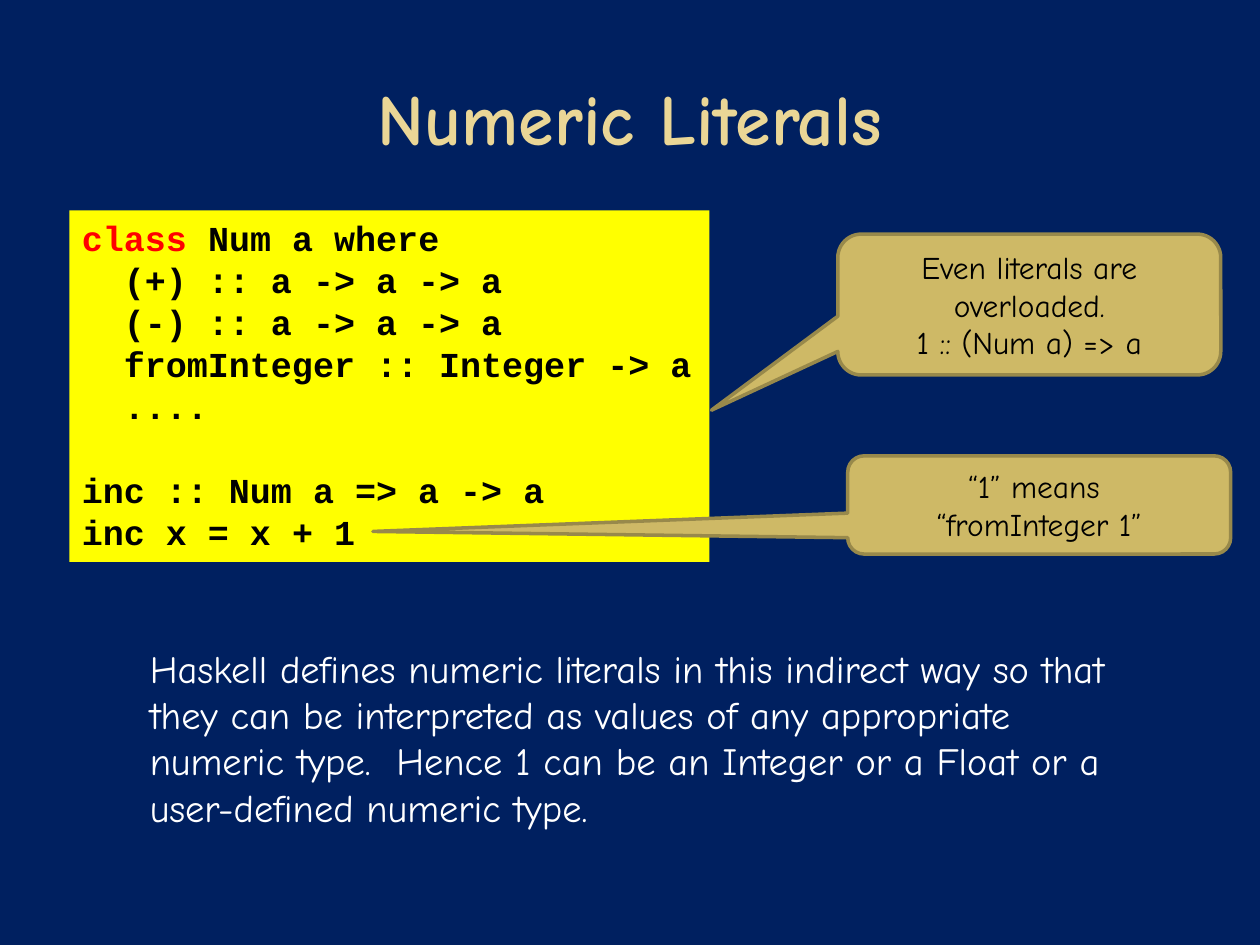
"""Build the slide on overloaded numeric literals in Haskell."""
from dataclasses import dataclass

from pptx import Presentation
from pptx.dml.color import RGBColor
from pptx.enum.shapes import MSO_SHAPE
from pptx.enum.text import MSO_ANCHOR, PP_ALIGN
from pptx.util import Cm, Pt

RECT = MSO_SHAPE.RECTANGLE
CALLOUT = MSO_SHAPE.ROUNDED_RECTANGULAR_CALLOUT
TOP, MIDDLE = MSO_ANCHOR.TOP, MSO_ANCHOR.MIDDLE
LEFT, CENTER = PP_ALIGN.LEFT, PP_ALIGN.CENTER
LINE_PITCH = 1.2


@dataclass(frozen=True)
class Theme:
    background: str = "002060"
    title: str = "EAD696"
    code_fill: str = "FFFF00"
    keyword: str = "FF0000"
    ink: str = "000000"
    callout_fill: str = "CEB966"
    callout_line: str = "98894B"
    note: str = "FFFFFF"
    font: str = "Comic Neue"
    code_font: str = "Courier New"
    title_size: int = 41
    code_size: int = 20
    callout_size: int = 18
    note_size: int = 22


@dataclass(frozen=True)
class Box:
    left: float
    top: float
    width: float
    height: float

    def lengths(self) -> tuple:
        return Cm(self.left), Cm(self.top), Cm(self.width), Cm(self.height)


@dataclass(frozen=True)
class Callout:
    box: Box
    tip: tuple[float, float]
    lines: tuple[str, ...]


@dataclass(frozen=True)
class CodeLine:
    text: str
    keyword: str = ""
    indent: int = 0
    gap: int = 0


THEME = Theme()
TITLE_BOX = Box(1.27, 0.76, 22.86, 3.18)
CODE_BOX = Box(1.4, 4.24, 12.9, 7.09)
NOTE_BOX = Box(2.77, 12.88, 19.86, 4.01)
CODE = (
    CodeLine("Num a where", keyword="class "),
    CodeLine("(+) :: a -> a -> a", indent=1),
    CodeLine("(-) :: a -> a -> a", indent=1),
    CodeLine("fromInteger :: Integer -> a", indent=1),
    CodeLine("....", indent=1),
    CodeLine("inc :: Num a => a -> a", gap=1),
    CodeLine("inc x = x + 1"),
)
CALLOUTS = (
    Callout(Box(16.89, 4.72, 7.72, 2.84), (-0.83, 0.75),
            ("Even literals are overloaded.", "1 :: (Num a) => a")),
    Callout(Box(17.09, 9.19, 7.72, 1.98), (-1.74, 0.27),
            ("“1” means ", "“fromInteger 1”")),
)
NOTE = ("Haskell defines numeric literals in this indirect way so that they can be "
        "interpreted as values of any appropriate numeric type.  Hence 1 can be an "
        "Integer or a Float or a user-defined numeric type.")


def rgb(value: str) -> RGBColor:
    return RGBColor.from_string(value)


def add_run(p, text: str, *, size: int, color: str, font: str = THEME.font,
            bold: bool = False) -> None:
    r = p.add_run()
    r.text = text
    r.font.name, r.font.size, r.font.bold = font, Pt(size), bold
    r.font.color.rgb = rgb(color)


def add_paragraph(tf, first: bool, size: int, align=LEFT):
    p = tf.paragraphs[0] if first else tf.add_paragraph()
    p.alignment = align
    p.line_spacing = Pt(size * LINE_PITCH)
    return p


def add_panel(slide, kind, box: Box, fill: str, anchor):
    sp = slide.shapes.add_shape(kind, *box.lengths())
    sp.shadow.inherit = False
    sp.fill.solid()
    sp.fill.fore_color.rgb = rgb(fill)
    sp.line.fill.background()
    sp.text_frame.word_wrap = True
    sp.text_frame.vertical_anchor = anchor
    return sp


def add_title(slide) -> None:
    sp = slide.shapes.title
    sp.left, sp.top, sp.width, sp.height = TITLE_BOX.lengths()
    sp.text_frame.vertical_anchor = MIDDLE
    p = sp.text_frame.paragraphs[0]
    p.alignment = CENTER
    add_run(p, "Numeric Literals", size=THEME.title_size, color=THEME.title, bold=True)


def add_code(slide) -> None:
    size = THEME.code_size
    style = {"size": size, "font": THEME.code_font, "bold": True}
    sp = add_panel(slide, RECT, CODE_BOX, THEME.code_fill, TOP)
    for i, line in enumerate(CODE):
        p = add_paragraph(sp.text_frame, i == 0, size)
        p.space_before = Pt(line.gap * size * LINE_PITCH)
        if line.indent:
            p._p.get_or_add_pPr().set("marL", str(Pt(line.indent * size * 1.2)))
        if line.keyword:
            add_run(p, line.keyword, color=THEME.keyword, **style)
        add_run(p, line.text, color=THEME.ink, **style)


def add_callout(slide, callout: Callout) -> None:
    sp = add_panel(slide, CALLOUT, callout.box, THEME.callout_fill, MIDDLE)
    sp.adjustments[0], sp.adjustments[1] = callout.tip
    sp.line.color.rgb = rgb(THEME.callout_line)
    sp.line.width = Pt(2)
    for i, text in enumerate(callout.lines):
        p = add_paragraph(sp.text_frame, i == 0, THEME.callout_size, CENTER)
        add_run(p, text, size=THEME.callout_size, color=THEME.ink)


def add_note(slide) -> None:
    tf = slide.shapes.add_textbox(*NOTE_BOX.lengths()).text_frame
    tf.word_wrap = True
    p = add_paragraph(tf, True, THEME.note_size)
    add_run(p, NOTE, size=THEME.note_size, color=THEME.note)


def main() -> None:
    prs = Presentation()
    prs.slide_width, prs.slide_height = Cm(25.4), Cm(19.05)
    slide = prs.slides.add_slide(prs.slide_layouts.get_by_name("Title Only"))
    slide.background.fill.solid()
    slide.background.fill.fore_color.rgb = rgb(THEME.background)
    add_title(slide)
    add_code(slide)
    for callout in CALLOUTS:
        add_callout(slide, callout)
    add_note(slide)
    prs.save("out.pptx")


if __name__ == "__main__":
    main()
